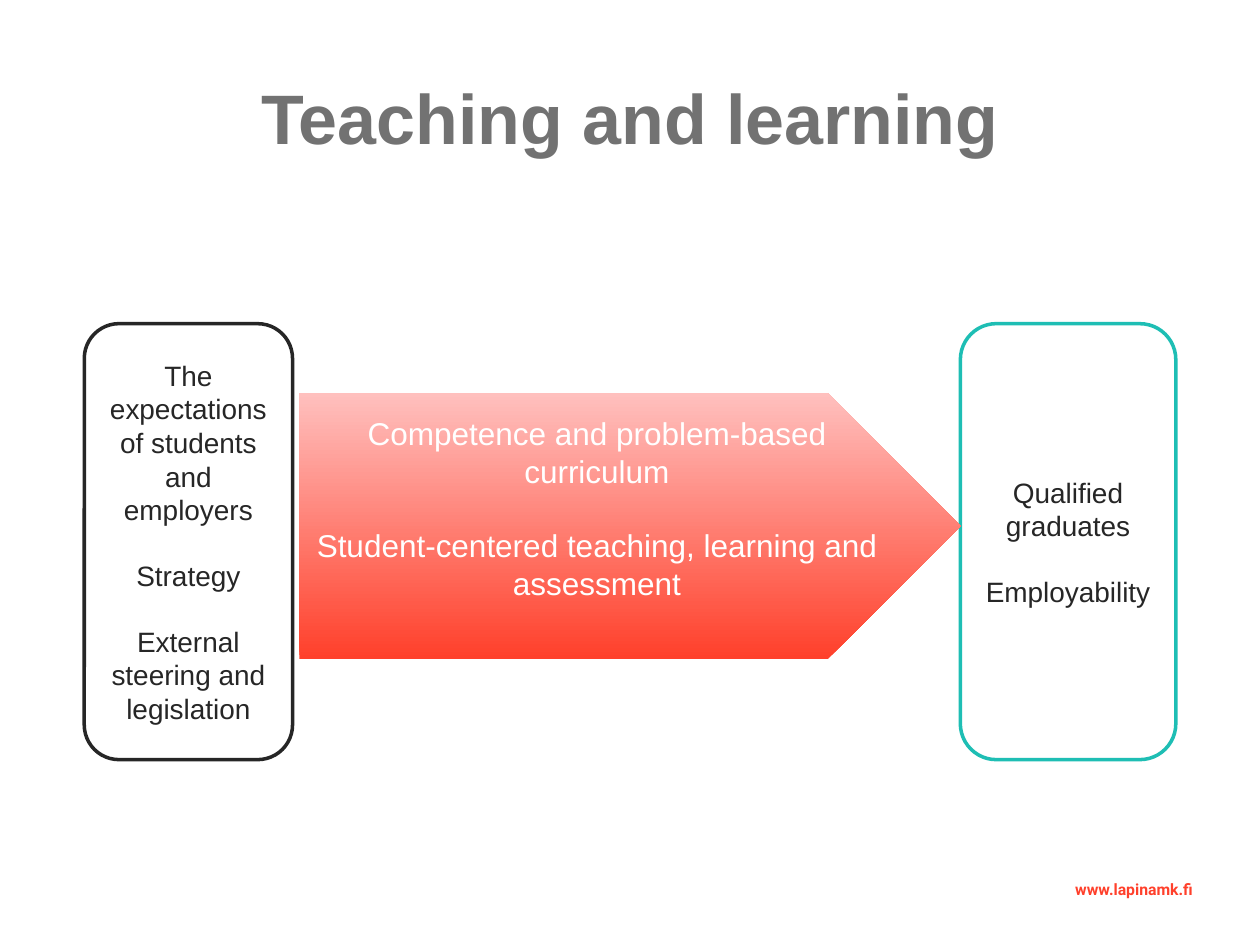
import dataclasses
import typing

import pptx
import pptx.dml.color
import pptx.enum.shapes
import pptx.enum.text
import pptx.shapes.autoshape
import pptx.slide
import pptx.util

Pt = pptx.util.Pt
Color = pptx.dml.color.RGBColor
Anchor = pptx.enum.text.MSO_ANCHOR
Preset = pptx.enum.shapes.MSO_SHAPE


@dataclasses.dataclass(frozen=True)
class Theme:
    heading_font: str = "Arial"
    footer_font: str = "Roboto"
    title_size: float = 40
    arrow_size: float = 18
    panel_size: float = 16
    footer_size: float = 9
    line_height: float = 1.15
    outline_width: float = 2
    white: Color = Color(0xFF, 0xFF, 0xFF)
    gray: Color = Color(0x72, 0x72, 0x72)
    dark: Color = Color(0x26, 0x26, 0x26)
    teal: Color = Color(0x1E, 0xBE, 0xB4)
    red: Color = Color(0xFF, 0x40, 0x2B)
    pink: Color = Color(0xFF, 0xC0, 0xBE)


@dataclasses.dataclass(frozen=True)
class Box:
    left: float
    top: float
    width: float
    height: float

    def lengths(self) -> tuple[pptx.util.Length, ...]:
        return tuple(Pt(value) for value in dataclasses.astuple(self))


@dataclasses.dataclass(frozen=True)
class Panel:
    box: Box
    outline: Color
    paragraphs: tuple[str, ...]


THEME = Theme()
PANEL_TOP, PANEL_HEIGHT = 185, 249.1
PANELS = (
    Panel(
        Box(548.8, PANEL_TOP, 123.1, PANEL_HEIGHT),
        THEME.teal,
        ("Qualified graduates", "Employability"),
    ),
    Panel(
        Box(48.2, PANEL_TOP, 119, PANEL_HEIGHT),
        THEME.dark,
        (
            "The expectations of students and employers",
            "Strategy",
            "External steering and legislation",
        ),
    ),
)
ARROW_BOX = Box(171.1, 224.6, 378, 151.9)
ARROW_TEXT = (
    "Competence and problem-based curriculum",
    "Student-centered teaching, learning and assessment",
)


def write_text(
    shape: pptx.shapes.autoshape.Shape,
    paragraphs: typing.Sequence[str],
    *,
    size: float,
    color: Color,
    font: str = THEME.heading_font,
    bold: bool = False,
    anchor: Anchor = Anchor.MIDDLE,
    bottom_margin: float = 3.6,
) -> None:
    frame = shape.text_frame
    frame.word_wrap = True
    frame.vertical_anchor = anchor
    frame.margin_bottom = Pt(bottom_margin)
    for index, text in enumerate(paragraphs):
        paragraph = frame.paragraphs[0] if index == 0 else frame.add_paragraph()
        paragraph.alignment = pptx.enum.text.PP_ALIGN.CENTER
        if index > 0:
            paragraph.space_before = Pt(round(size * THEME.line_height, 1))
        run = paragraph.add_run()
        run.text = text
        run.font.name = font
        run.font.size = Pt(size)
        run.font.bold = bold
        run.font.color.rgb = color


def add_panel(slide: pptx.slide.Slide, panel: Panel) -> None:
    shape = slide.shapes.add_shape(Preset.ROUNDED_RECTANGLE, *panel.box.lengths())
    shape.shadow.inherit = False
    shape.fill.solid()
    shape.fill.fore_color.rgb = THEME.white
    shape.line.color.rgb = panel.outline
    shape.line.width = Pt(THEME.outline_width)
    write_text(shape, panel.paragraphs, size=THEME.panel_size, color=THEME.dark)


def add_arrow(slide: pptx.slide.Slide, box: Box, paragraphs: typing.Sequence[str]) -> None:
    shape = slide.shapes.add_shape(Preset.PENTAGON, *box.lengths())
    shape.shadow.inherit = False
    shape.line.fill.background()
    shape.fill.gradient()
    shape.fill.gradient_angle = 90
    for stop, color, position in zip(
        shape.fill.gradient_stops, (THEME.red, THEME.pink), (0, 1)
    ):
        stop.color.rgb = color
        stop.position = position
    write_text(
        shape,
        paragraphs,
        size=THEME.arrow_size,
        color=THEME.white,
        bottom_margin=24.3,
    )


def main() -> None:
    presentation = pptx.Presentation()
    presentation.slide_width = Pt(720)
    presentation.slide_height = Pt(540)
    slide = presentation.slides.add_slide(presentation.slide_layouts[6])

    footer = slide.shapes.add_textbox(*Box(576, 499, 144, 30.2).lengths())
    write_text(
        footer,
        ("www.lapinamk.fi",),
        size=THEME.footer_size,
        color=THEME.red,
        font=THEME.footer_font,
        bold=True,
        anchor=Anchor.TOP,
    )
    title = slide.shapes.add_textbox(*Box(36, 21.6, 648, 90).lengths())
    write_text(
        title,
        ("Teaching and learning",),
        size=THEME.title_size,
        color=THEME.gray,
        bold=True,
    )

    outcomes, inputs = PANELS
    add_panel(slide, outcomes)
    add_arrow(slide, ARROW_BOX, ARROW_TEXT)
    add_panel(slide, inputs)
    presentation.save("out.pptx")


if __name__ == "__main__":
    main()
